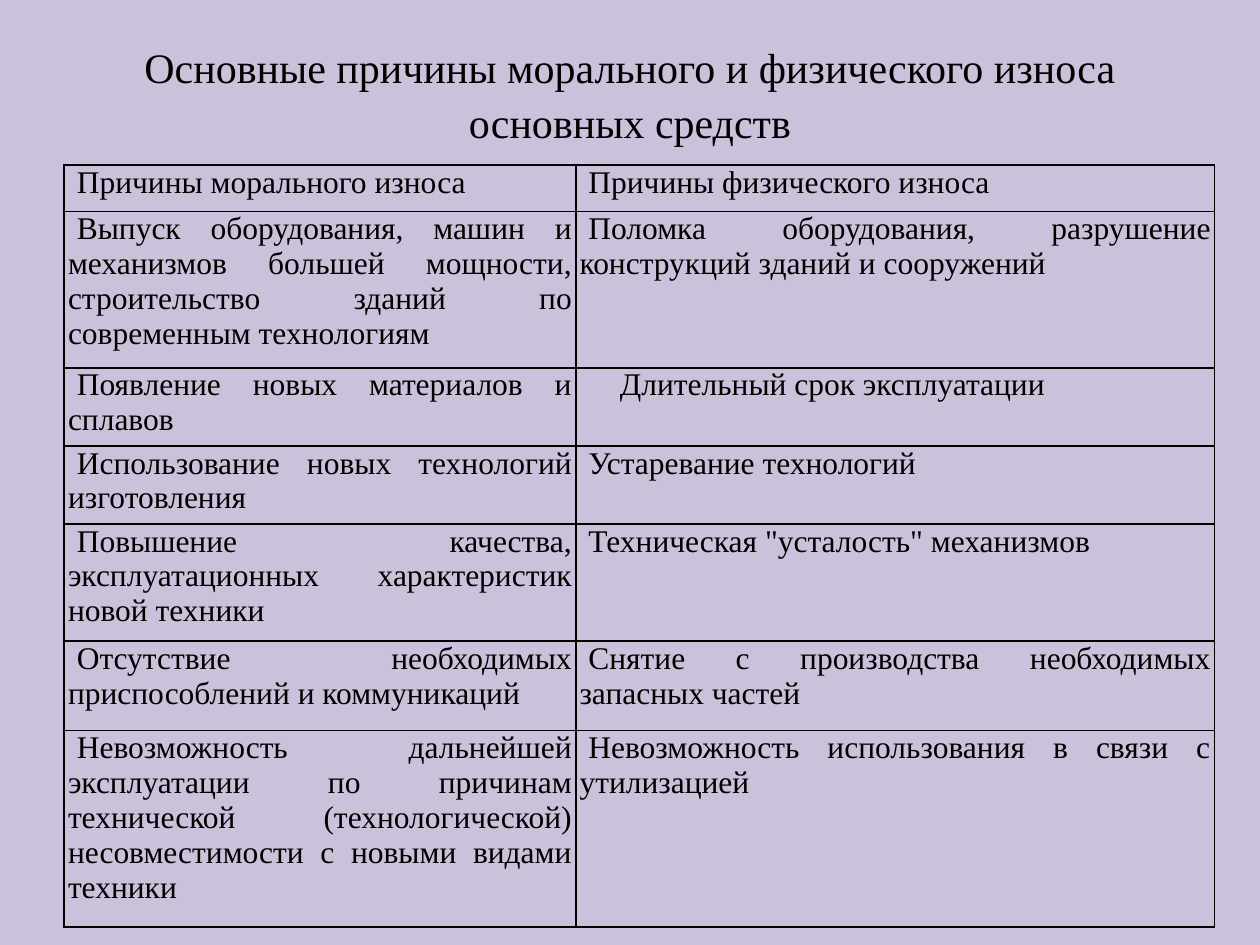
from pptx import Presentation
from pptx.dml.color import RGBColor as RGB
from pptx.enum.text import MSO_ANCHOR as Anchor, PP_ALIGN as Align
from pptx.oxml import parse_xml
from pptx.oxml.ns import nsdecls
from pptx.util import Inches, Pt

COLORS = {"back": "CCC1DA", "ink": "000000"}
FONT = "Times New Roman"
TITLE = "Основные причины морального и физического износа основных средств"
WIDTHS = [4.06, 5.07]
HEIGHTS = [0.37, 1.24, 0.62, 0.62, 0.93, 0.71, 1.56]
CAUSES = [
    ("Причины морального износа", "Причины физического износа"),
    ("Выпуск оборудования, машин и механизмов большей мощности, "
     "строительство зданий по современным технологиям",
     "Поломка оборудования, разрушение конструкций зданий и сооружений"),
    ("Появление новых материалов и сплавов", "Длительный срок эксплуатации"),
    ("Использование новых технологий изготовления", "Устаревание технологий"),
    ("Повышение качества, эксплуатационных характеристик новой техники",
     'Техническая "усталость" механизмов'),
    ("Отсутствие необходимых приспособлений и коммуникаций",
     "Снятие с производства необходимых запасных частей"),
    ("Невозможность дальнейшей эксплуатации по причинам технической "
     "(технологической) несовместимости с новыми видами техники",
     "Невозможность использования в связи с утилизацией"),
]
INDENTS = {(2, 1): 0.25}


def assign(item, values):
    for name, value in values.items():
        setattr(item, name, value)


class Page:
    def __init__(self, deck):
        self.slide = deck.slides.add_slide(deck.slide_layouts[5])
        fill = self.slide.background.fill
        fill.solid()
        fill.fore_color.rgb = RGB.from_string(COLORS["back"])

    def label(self, para, text, size):
        run = para.add_run()
        run.text = text
        assign(run.font, {"name": FONT, "size": Pt(size), "bold": False})
        run.font.color.rgb = RGB.from_string(COLORS["ink"])

    def title(self, text, left, top, width, height):
        shape = self.slide.shapes.title
        assign(shape, {"left": Inches(left), "top": Inches(top),
                       "width": Inches(width), "height": Inches(height)})
        frame = shape.text_frame
        assign(frame, {"vertical_anchor": Anchor.MIDDLE, "word_wrap": True,
                       "margin_bottom": Inches(0.44)})
        para = frame.paragraphs[0]
        assign(para, {"alignment": Align.CENTER, "line_spacing": 1.1})
        self.label(para, text, 24)

    def table(self, rows, left, top, widths, heights):
        table = self.slide.shapes.add_table(
            len(rows), len(widths), Inches(left), Inches(top),
            Inches(sum(widths)), Inches(sum(heights))).table
        assign(table, {"first_row": False, "horz_banding": False})
        for col, width in zip(table.columns, widths):
            col.width = Inches(width)
        for i, (row, height) in enumerate(zip(table.rows, heights)):
            row.height = Inches(height)
            for j, cell in enumerate(row.cells):
                self.cell(cell, rows[i][j], INDENTS.get((i, j), 0))

    def cell(self, cell, text, margin):
        assign(cell, {"margin_left": Inches(0.03), "margin_right": Inches(0.03),
                      "margin_top": 0, "margin_bottom": 0,
                      "vertical_anchor": Anchor.TOP})
        para = cell.text_frame.paragraphs[0]
        para.alignment = Align.JUSTIFY
        props = para._p.get_or_add_pPr()
        props.set("marL", str(Inches(margin)))
        props.set("indent", str(Inches(0.07)))
        self.label(para, text, 18)
        self.border(cell)
        cell.fill.background()

    def border(self, cell):
        props = cell._tc.get_or_add_tcPr()
        for side in ("lnL", "lnR", "lnT", "lnB"):
            props.append(parse_xml(
                f'<a:{side} {nsdecls("a")} w="{Pt(1)}"><a:solidFill>'
                f'<a:srgbClr val="{COLORS["ink"]}"/></a:solidFill></a:{side}>'))


def main():
    deck = Presentation()
    assign(deck, {"slide_width": Inches(10), "slide_height": Inches(7.5)})
    page = Page(deck)
    page.title(TITLE, 0.5, 0.3, 9, 1.25)
    page.table(CAUSES, 0.51, 1.31, WIDTHS, HEIGHTS)
    deck.save("out.pptx")


if __name__ == "__main__":
    main()
